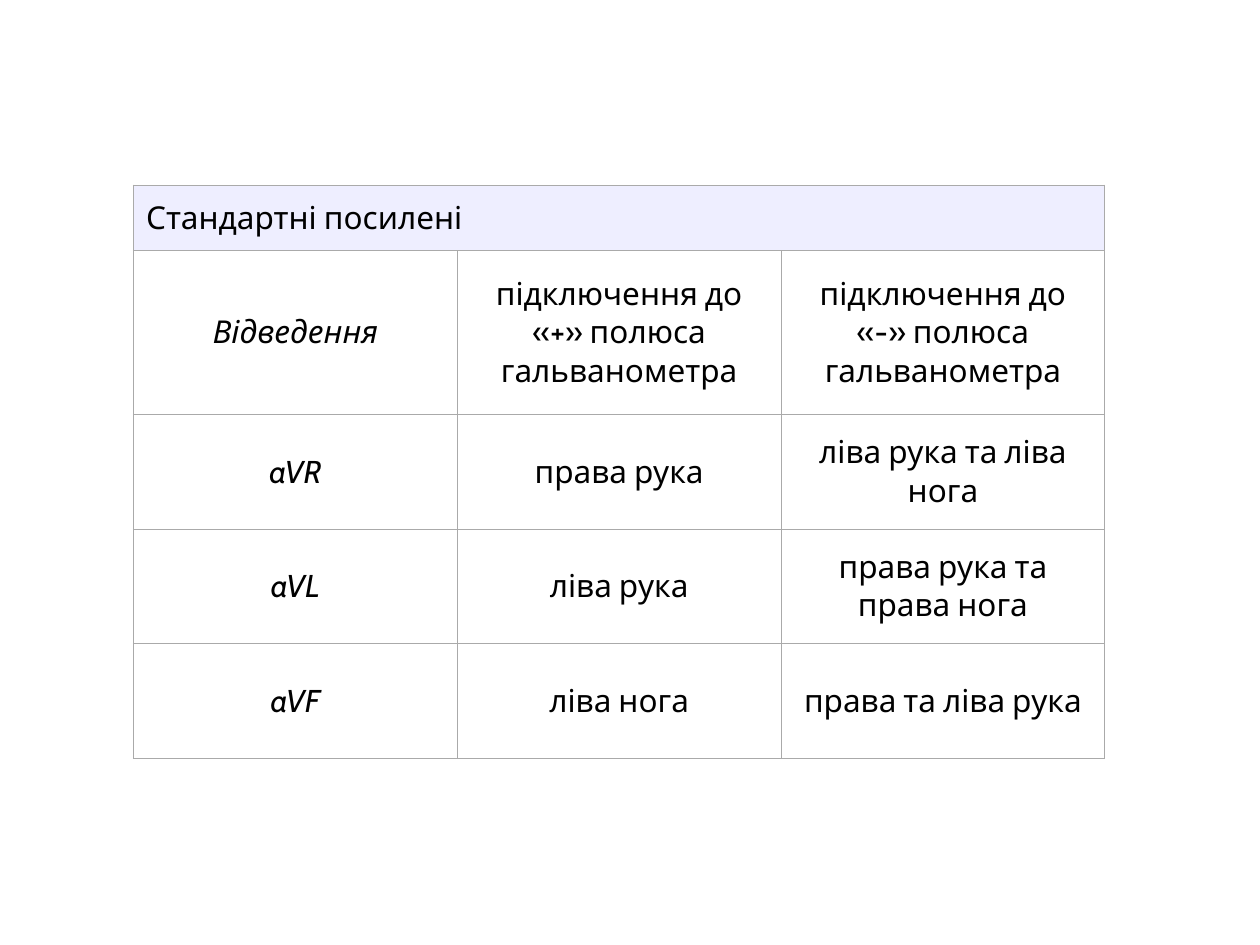
from lxml import etree
from pptx import Presentation
from pptx.dml.color import RGBColor
from pptx.enum import text
from pptx.oxml.ns import qn
from pptx.util import Inches, Pt

HEADING = "Стандартні посилені"
LEADS = [
    ("Відведення", "підключення до «+» полюса гальванометра",
     "підключення до «-» полюса гальванометра"),
    ("aVR", "права рука", "ліва рука та ліва нога"),
    ("aVL", "ліва рука", "права рука та права нога"),
    ("aVF", "ліва нога", "права та ліва рука"),
]
COLORS = {"heading": "EEEEFF", "body": "FFFFFF", "border": "AAAAAA", "text": "000000"}
ROW_HEIGHTS = [0.52, 1.3] + [0.91] * 3
COLUMN_WIDTH = 2.57
LEFT, TOP = 1.06, 1.47


def add_borders(cell):
    properties = cell._tc.get_or_add_tcPr()
    for side in ("lnL", "lnR", "lnT", "lnB"):
        line = etree.SubElement(properties, qn(f"a:{side}"), w=str(Pt(0.75)))
        fill = etree.SubElement(line, qn("a:solidFill"))
        etree.SubElement(fill, qn("a:srgbClr"), val=COLORS["border"])


def format_cell(cell, fill):
    add_borders(cell)
    cell.fill.solid()
    cell.fill.fore_color.rgb = RGBColor.from_string(COLORS[fill])
    cell.vertical_anchor = text.MSO_ANCHOR.MIDDLE


def write_cell(cell, content, alignment, italic=False):
    cell.text = content
    paragraph = cell.text_frame.paragraphs[0]
    paragraph.alignment = alignment
    font = paragraph.font
    font.name, font.size = "Cabin", Pt(18)
    font.bold, font.italic = False, italic
    font.color.rgb = RGBColor.from_string(COLORS["text"])


presentation = Presentation()
presentation.slide_width, presentation.slide_height = Inches(10), Inches(7.5)
slide = presentation.slides.add_slide(presentation.slide_layouts[6])

column_count = len(LEADS[0])
table = slide.shapes.add_table(
    len(ROW_HEIGHTS), column_count, Inches(LEFT), Inches(TOP),
    Inches(COLUMN_WIDTH * column_count), Inches(sum(ROW_HEIGHTS))).table
table.first_row = table.horz_banding = False
for column in table.columns:
    column.width = Inches(COLUMN_WIDTH)
for row, height in zip(table.rows, ROW_HEIGHTS):
    row.height = Inches(height)

for column_index in range(column_count):
    format_cell(table.cell(0, column_index), "heading")
heading = table.cell(0, 0)
heading.merge(table.cell(0, column_count - 1))
write_cell(heading, HEADING, text.PP_ALIGN.LEFT)

for row_index, lead in enumerate(LEADS, start=1):
    for column_index, content in enumerate(lead):
        cell = table.cell(row_index, column_index)
        format_cell(cell, "body")
        write_cell(cell, content, text.PP_ALIGN.CENTER, italic=column_index == 0)

presentation.save("out.pptx")
